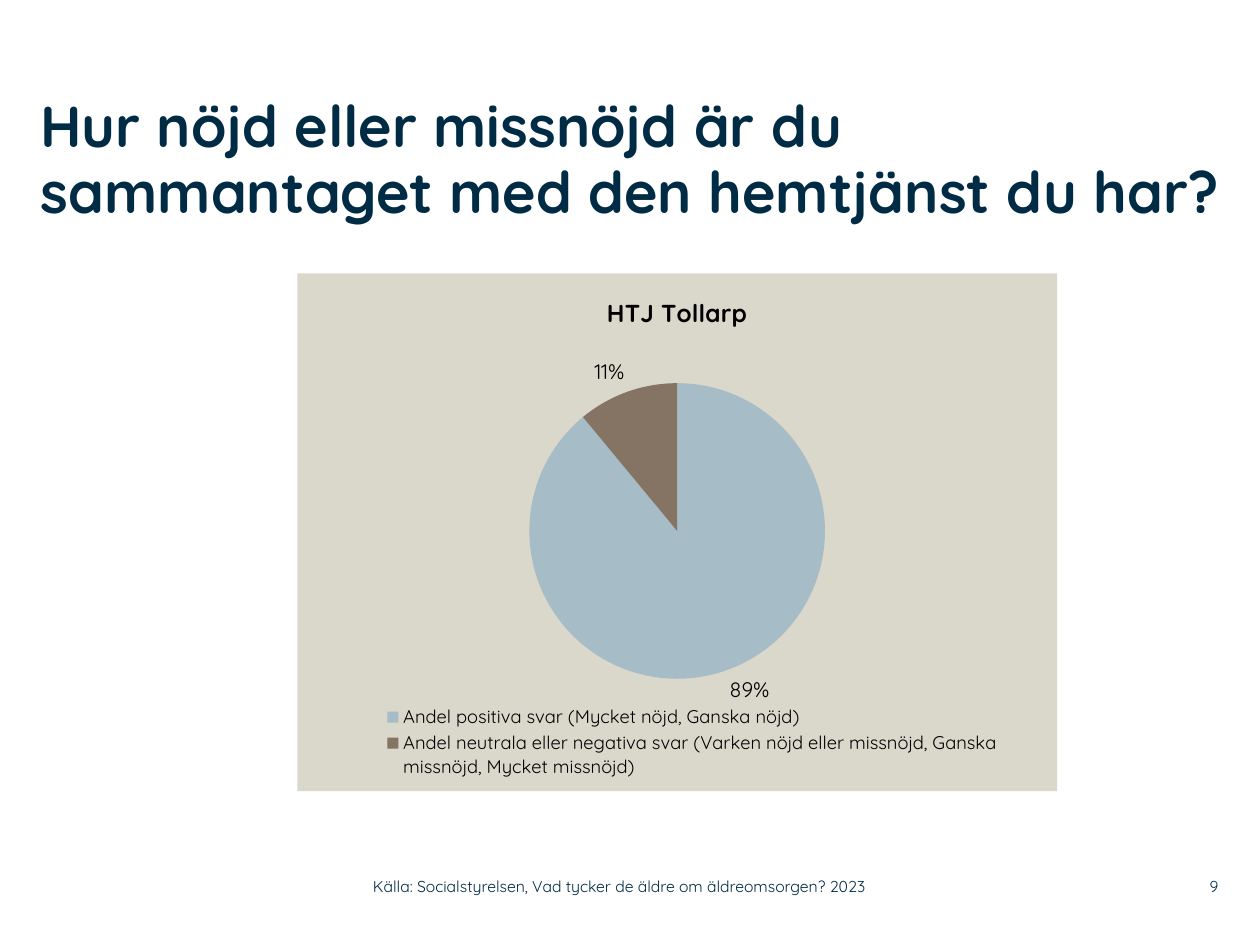
import dataclasses

import lxml.etree
import pptx
import pptx.chart.data
import pptx.dml.color
import pptx.enum.chart
import pptx.enum.text
import pptx.oxml
import pptx.oxml.ns
import pptx.util

Inches = pptx.util.Inches
Align = pptx.enum.text.PP_ALIGN
Anchor = pptx.enum.text.MSO_ANCHOR
qn = pptx.oxml.ns.qn


@dataclasses.dataclass(frozen=True)
class Theme:
    font: str = "Quicksand"
    navy: str = "002B45"
    black: str = "000000"
    panel: str = "DAD7CB"
    slices: tuple = ("A6BCC6", "857363")
    heading_size: float = 33
    chart_title_size: float = 14
    label_size: float = 12
    legend_size: float = 10.5
    footer_size: float = 9


class SlideBuilder:
    """Holds the theme and the current slide, and adds elements to it."""

    def __init__(self, theme, slide):
        self.theme = theme
        self.slide = slide

    def style(self, font, size, color, bold=False):
        font.name = self.theme.font
        font.size = pptx.util.Pt(size)
        font.bold = bold
        font.color.rgb = pptx.dml.color.RGBColor.from_string(color)

    def text(self, place, lines, size, bold=False, align=Align.LEFT,
             anchor=Anchor.MIDDLE, spacing=None):
        box = self.slide.shapes.add_textbox(*map(Inches, place))
        frame = box.text_frame
        frame.word_wrap = True
        frame.vertical_anchor = anchor
        frame.margin_left = frame.margin_right = 0
        frame.margin_top = frame.margin_bottom = 0
        para = frame.paragraphs[0]
        para.alignment = align
        para.line_spacing = spacing
        for number, line in enumerate(lines):
            if number:
                para.add_line_break()
            span = para.add_run()
            span.text = line
            self.style(span.font, size, self.theme.navy, bold)

    def layout(self, x, y, width, height, inner=False):
        layout = lxml.etree.Element(qn("c:layout"))
        manual = lxml.etree.SubElement(layout, qn("c:manualLayout"))
        settings = [("xMode", "edge"), ("yMode", "edge"),
                    ("x", x), ("y", y), ("w", width), ("h", height)]
        if inner:
            settings.insert(0, ("layoutTarget", "inner"))
        for name, value in settings:
            lxml.etree.SubElement(manual, qn("c:" + name)).set("val", str(value))
        return layout

    def pie(self, place, title, shares):
        theme = self.theme
        data = pptx.chart.data.CategoryChartData()
        data.categories = list(shares)
        data.add_series(title, list(shares.values()))
        chart = self.slide.shapes.add_chart(
            pptx.enum.chart.XL_CHART_TYPE.PIE, *map(Inches, place), data).chart
        self.style(chart.font, theme.label_size, theme.black)

        chart.has_title = True
        span = chart.chart_title.text_frame.paragraphs[0].add_run()
        span.text = title
        self.style(span.font, theme.chart_title_size, theme.black, True)

        chart.has_legend = True
        legend = chart.legend
        legend.position = pptx.enum.chart.XL_LEGEND_POSITION.BOTTOM
        legend.include_in_layout = False
        self.style(legend.font, theme.legend_size, theme.black)

        plot = chart.plots[0]
        plot.vary_by_categories = True
        plot.has_data_labels = True
        labels = plot.data_labels
        labels.show_percentage = True
        labels.show_value = False
        labels.number_format = "0%"
        labels.number_format_is_linked = False
        labels.position = pptx.enum.chart.XL_LABEL_POSITION.OUTSIDE_END
        self.style(labels.font, theme.label_size, theme.black)
        for number, color in enumerate(theme.slices):
            fill = plot.series[0].points[number].format.fill
            fill.solid()
            fill.fore_color.rgb = pptx.dml.color.RGBColor.from_string(color)

        root = chart.element
        area = root.find(".//" + qn("c:plotArea"))
        key = root.find(".//" + qn("c:legend"))
        for parent in (area, key):
            for old in parent.findall(qn("c:layout")):
                parent.remove(old)
        area.insert(0, self.layout(0.305, 0.212, 0.39, 0.571, inner=True))
        key.find(qn("c:legendPos")).addnext(self.layout(0.1, 0.83, 0.84, 0.15))
        panel = pptx.oxml.parse_xml(
            f'<c:spPr {pptx.oxml.ns.nsdecls("c", "a")}><a:solidFill>'
            f'<a:srgbClr val="{theme.panel}"/></a:solidFill>'
            '<a:ln><a:noFill/></a:ln></c:spPr>')
        root.find(qn("c:chart")).addnext(panel)


def main():
    deck = pptx.Presentation()
    deck.slide_width, deck.slide_height = Inches(10), Inches(7.5)
    page = deck.slides.add_slide(deck.slide_layouts[6])
    theme = Theme()
    builder = SlideBuilder(theme, page)
    builder.text((9.2, 6.89, 0.47, 0.29), ["9"], theme.footer_size,
                 align=Align.RIGHT)
    builder.text((2.96, 6.89, 4.43, 0.29),
                 ["Källa: Socialstyrelsen, Vad tycker de äldre om "
                  "äldreomsorgen? 2023"], theme.footer_size)
    builder.text((0.32, 0.75, 9.51, 1.42),
                 ["Hur nöjd eller missnöjd är du",
                  "sammantaget med den hemtjänst du har?"],
                 theme.heading_size, bold=True, anchor=Anchor.TOP, spacing=0.95)
    builder.pie((2.36, 2.17, 6.03, 4.11), "HTJ Tollarp", {
        "Andel positiva svar (Mycket nöjd, Ganska nöjd)": 89,
        "Andel neutrala eller negativa svar (Varken nöjd eller missnöjd, "
        "Ganska missnöjd, Mycket missnöjd)": 11,
    })
    deck.save("out.pptx")


if __name__ == "__main__":
    main()
